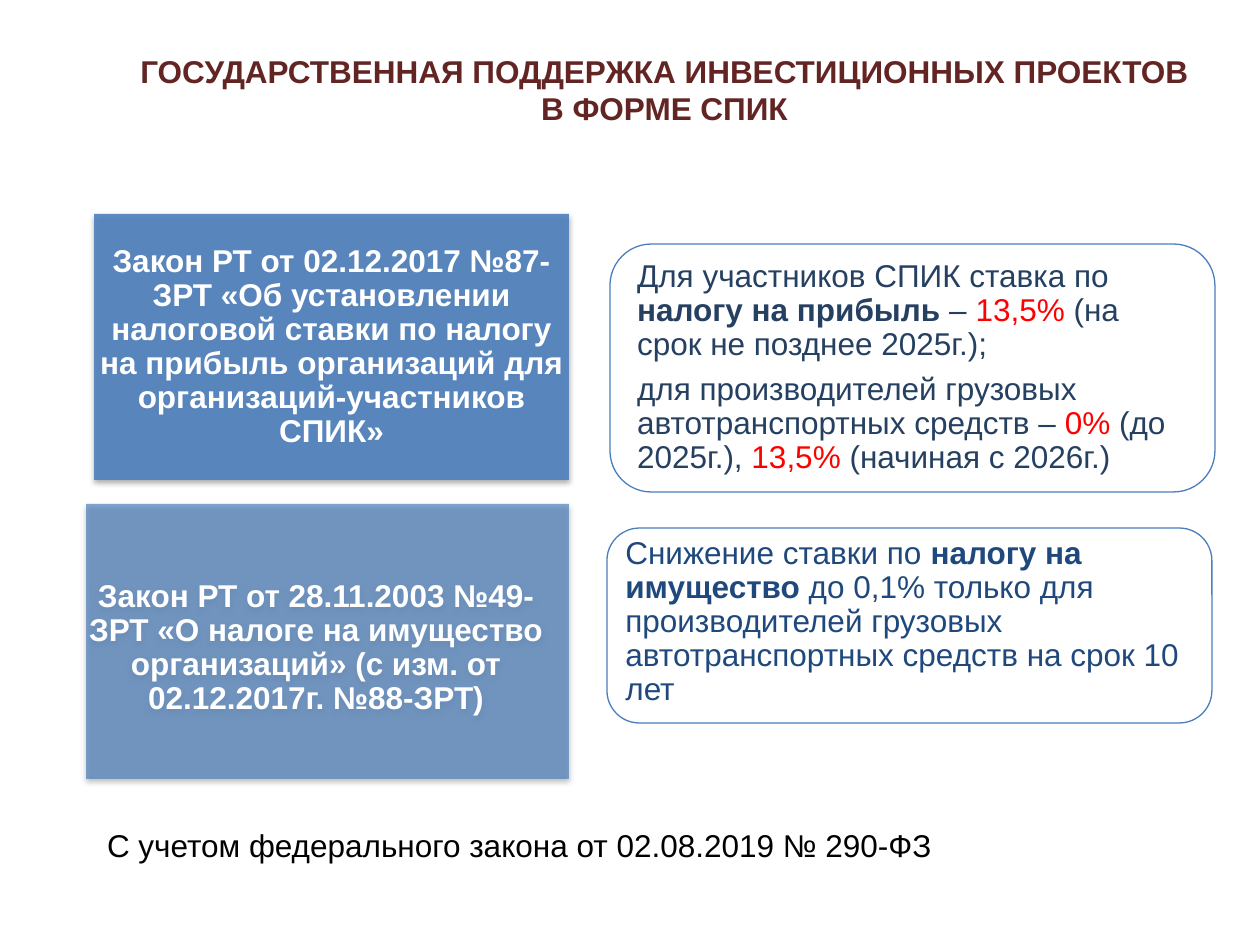
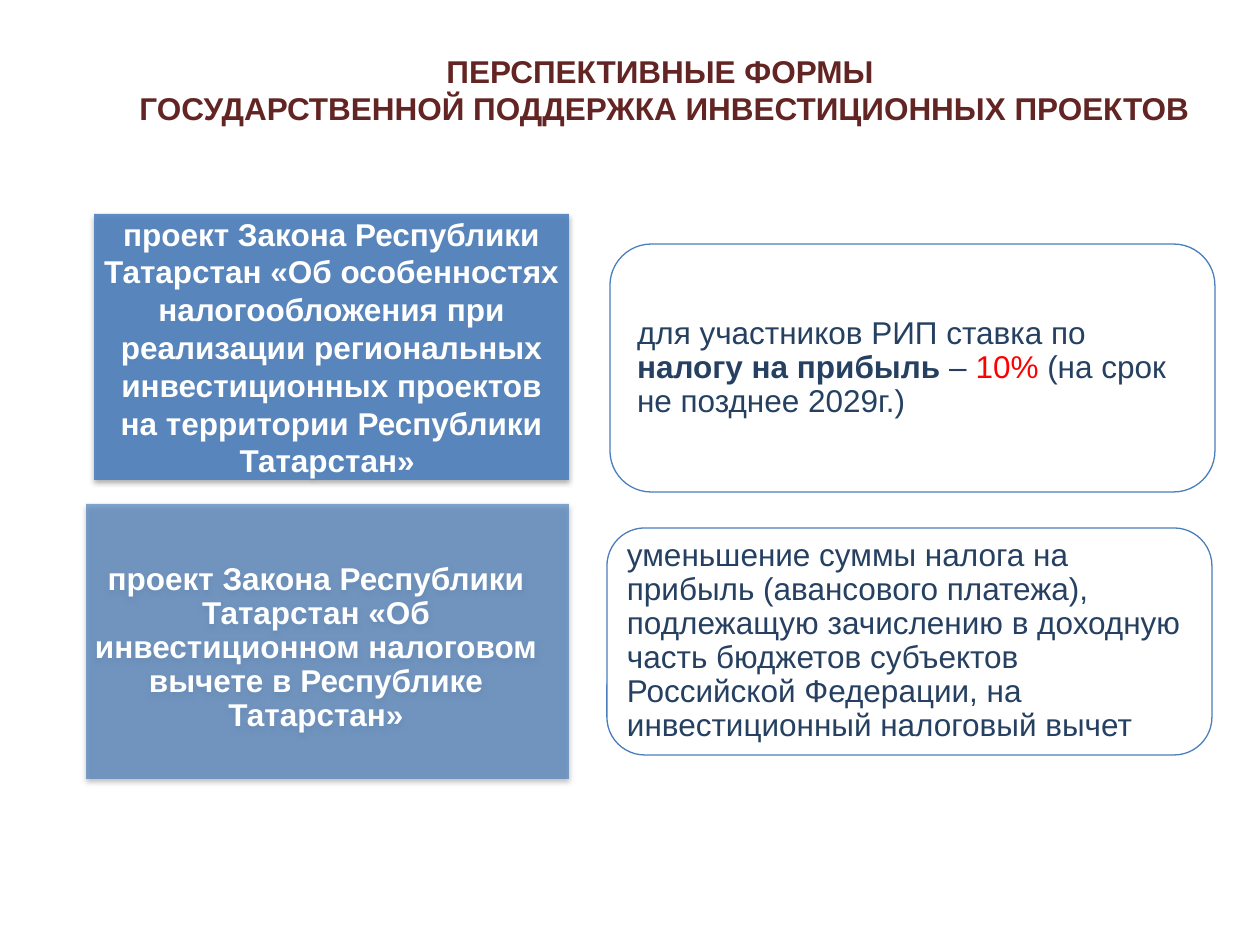
from lxml import etree
from pptx import Presentation
from pptx import util as u
from pptx.dml.color import RGBColor
from pptx.enum import shapes, text
from pptx.oxml.ns import qn

PX = 914400 / 126
FONT = "Arial"
SIZE = u.Pt(18)
MAROON = RGBColor(0x63, 0x25, 0x23)
BLUE = RGBColor(0x4F, 0x81, 0xBD)
OUTLINE = RGBColor(0x4B, 0x7E, 0xBC)
NAVY = RGBColor(0x25, 0x40, 0x61)
DARK_BLUE = RGBColor(0x1F, 0x49, 0x7D)
RED = RGBColor(0xFF, 0, 0)
WHITE = RGBColor(0xFF, 0xFF, 0xFF)
BLACK = RGBColor(0, 0, 0)

TITLE_BOX = (115, 45, 1099, 89)
PROFIT_LAW_BOX = (94, 214, 475, 266)
SECOND_LAW_BOX = (86, 504, 483, 275)
PROFIT_CARD_BOX = (610, 244, 605, 248)
PROPERTY_CARD_BOX = (607, 528, 605, 195)
DEDUCTION_CARD_BOX = (607, 528, 605, 227)
NOTE_BOX = (94, 820, 963, 50)

EVEN_INSETS = (6, 6, 6, 6)
SHIFTED_INSETS = (0, 20, 23, 6)
PROFIT_CARD_INSETS = (15, 0, 15, 0)
SECOND_CARD_INSETS = (9, 0, 10, 0)
RAISED_CARD_INSETS = (9, 0, 10, 6)


def px(*values):
    return [u.Emu(round(v * PX)) for v in values]


def write(tf, paragraphs, color=BLACK, bold=False, align=text.PP_ALIGN.LEFT,
          spacing=1.0, after=0, insets=(13, 6, 13, 6), anchor=text.MSO_ANCHOR.MIDDLE):
    tf.word_wrap = True
    tf.auto_size = text.MSO_AUTO_SIZE.NONE
    tf.vertical_anchor = anchor
    tf.margin_left, tf.margin_top, tf.margin_right, tf.margin_bottom = px(*insets)
    for i, runs in enumerate(paragraphs):
        p = tf.add_paragraph() if i else tf.paragraphs[0]
        p.alignment = align
        p.line_spacing = spacing
        p.space_after = u.Pt(after)
        for words, style in runs:
            for j, line in enumerate(words.split("\n")):
                if j:
                    p.add_line_break()
                r = p.add_run()
                r.text = line
                r.font.name = FONT
                r.font.size = SIZE
                r.font.bold = style.get("bold", bold)
                r.font.color.rgb = style.get("color", color)


def plain(words):
    return [[(words, {})]]


def set_opacity(sp, percent):
    color = sp._element.spPr.find(qn("a:solidFill"))[0]
    etree.SubElement(color, qn("a:alpha"), val=str(percent * 1000))


def add_soft_shadow(sp):
    effects = sp._element.spPr.find(qn("a:effectLst"))
    shadow = etree.SubElement(effects, qn("a:outerShdw"), blurRad="40000",
                              dist="23000", dir="5400000", rotWithShape="0")
    color = etree.SubElement(shadow, qn("a:srgbClr"), val=str(BLACK))
    etree.SubElement(color, qn("a:alpha"), val="35000")


def add_block(s, kind, box, fill, opacity):
    sp = s.shapes.add_shape(kind, *px(*box))
    sp.shadow.inherit = False
    sp.fill.solid()
    sp.fill.fore_color.rgb = fill
    set_opacity(sp, opacity)
    return sp


def add_law(s, box, words, opacity, insets=EVEN_INSETS, spacing=0.9, after=6.3):
    sp = add_block(s, shapes.MSO_SHAPE.RECTANGLE, box, BLUE, opacity)
    sp.line.fill.background()
    add_soft_shadow(sp)
    write(sp.text_frame, plain(words), color=WHITE, bold=True,
          align=text.PP_ALIGN.CENTER, spacing=spacing, after=after, insets=insets)


def add_card(s, box, paragraphs, insets, color=NAVY):
    sp = add_block(s, shapes.MSO_SHAPE.ROUNDED_RECTANGLE, box, WHITE, 90)
    sp.line.color.rgb = OUTLINE
    sp.line.width = u.Pt(0.75)
    write(sp.text_frame, paragraphs, color=color, spacing=0.9, after=6.3, insets=insets)


def add_note(s, words):
    sp = s.shapes.add_textbox(*px(*NOTE_BOX))
    write(sp.text_frame, plain(words), anchor=text.MSO_ANCHOR.TOP)


def add_titled_slide(prs, words):
    s = prs.slides.add_slide(prs.slide_layouts[5])
    title = s.shapes.title
    title.left, title.top, title.width, title.height = px(*TITLE_BOX)
    write(title.text_frame, plain(words), color=MAROON, bold=True,
          align=text.PP_ALIGN.CENTER)
    return s


def build_contract_slide(prs):
    s = add_titled_slide(
        prs, "ГОСУДАРСТВЕННАЯ ПОДДЕРЖКА ИНВЕСТИЦИОННЫХ ПРОЕКТОВ В ФОРМЕ СПИК")
    add_law(s, PROFIT_LAW_BOX,
            "Закон РТ от 02.12.2017 №87-ЗРТ «Об установлении налоговой ставки "
            "по налогу на прибыль организаций для организаций-участников СПИК»", 90)
    add_law(s, SECOND_LAW_BOX,
            "Закон РТ от 28.11.2003 №49-ЗРТ «О налоге на имущество организаций» "
            "(с изм. от 02.12.2017г. №88-ЗРТ)", 70, SHIFTED_INSETS)
    add_card(s, PROFIT_CARD_BOX, [
        [("Для участников СПИК ставка по ", {}),
         ("налогу на прибыль ", {"bold": True}),
         ("– ", {}),
         ("13,5%", {"color": RED}),
         (" (на срок не позднее 2025г.);", {})],
        [("для производителей грузовых автотранспортных средств – ", {}),
         ("0% ", {"color": RED}),
         ("(до 2025г.), ", {}),
         ("13,5% ", {"color": RED}),
         ("(начиная с 2026г.)", {})],
    ], PROFIT_CARD_INSETS)
    add_card(s, PROPERTY_CARD_BOX, [
        [("Снижение ставки по ", {}),
         ("налогу на имущество ", {"bold": True}),
         ("до 0,1% только для производителей грузовых автотранспортных "
          "средств на срок 10 лет", {})],
    ], RAISED_CARD_INSETS, color=DARK_BLUE)
    add_note(s, "С учетом федерального закона от 02.08.2019 № 290-ФЗ")


def build_prospects_slide(prs):
    s = add_titled_slide(
        prs, "ПЕРСПЕКТИВНЫЕ ФОРМЫ \nГОСУДАРСТВЕННОЙ ПОДДЕРЖКА ИНВЕСТИЦИОННЫХ ПРОЕКТОВ")
    add_law(s, PROFIT_LAW_BOX,
            "проект Закона Республики Татарстан «Об особенностях налогообложения "
            "при реализации региональных инвестиционных проектов на территории "
            "Республики Татарстан» ", 90, spacing=1.0, after=0)
    add_law(s, SECOND_LAW_BOX,
            "проект Закона Республики Татарстан «Об инвестиционном налоговом "
            "вычете в Республике Татарстан»", 70, SHIFTED_INSETS)
    add_card(s, PROFIT_CARD_BOX, [
        [("для участников РИП ставка по ", {}),
         ("налогу на прибыль ", {"bold": True}),
         ("– ", {}),
         ("10%", {"color": RED}),
         (" (на срок не позднее 2029г.)", {})],
    ], PROFIT_CARD_INSETS)
    add_card(s, DEDUCTION_CARD_BOX, plain(
        "уменьшение суммы налога на прибыль (авансового платежа), подлежащую "
        "зачислению в доходную часть бюджетов субъектов Российской Федерации, "
        "на инвестиционный налоговый вычет"), SECOND_CARD_INSETS)


def main():
    prs = Presentation()
    prs.slide_width, prs.slide_height = px(1260, 945)
    build_contract_slide(prs)
    build_prospects_slide(prs)
    prs.save("out.pptx")


if __name__ == "__main__":
    main()
